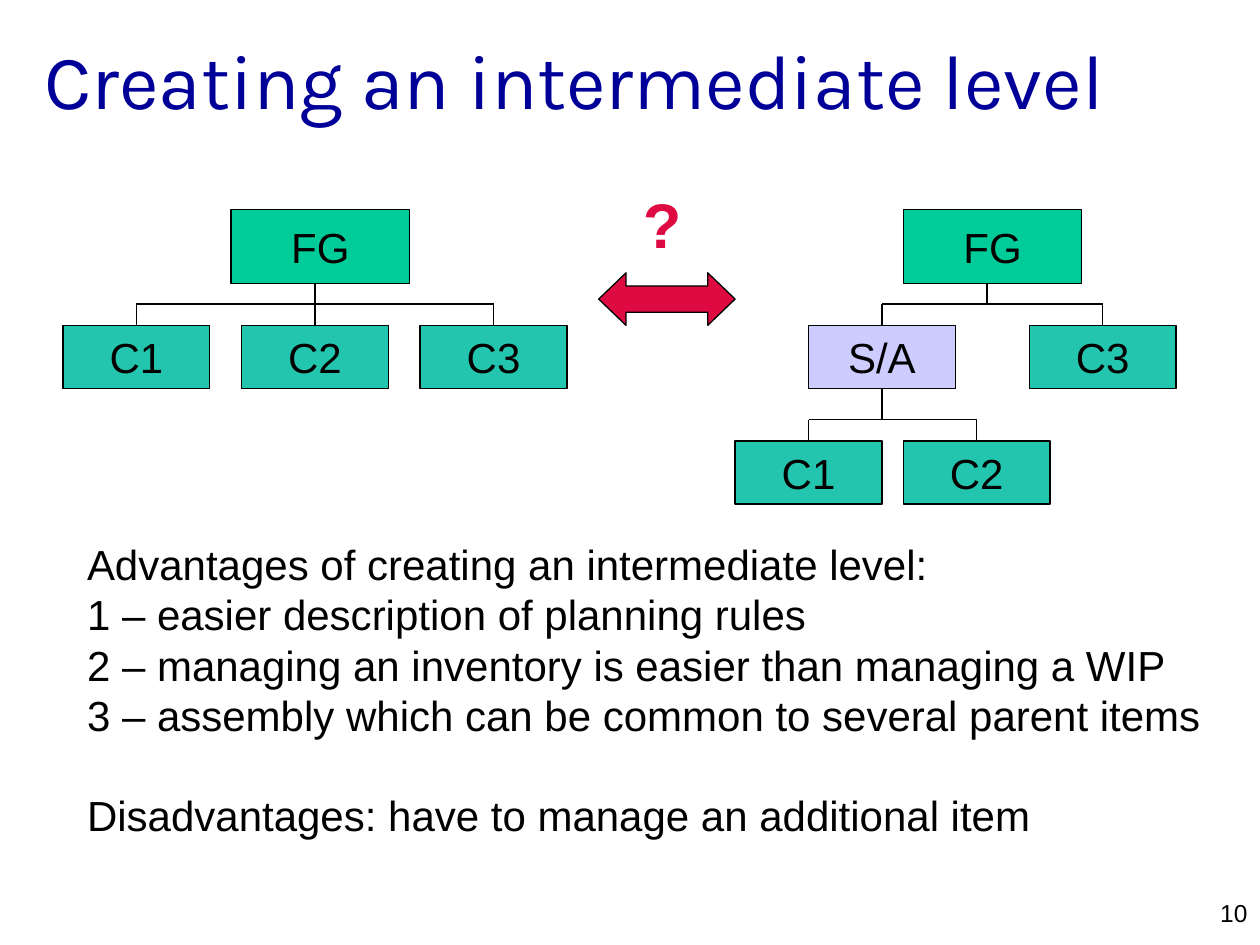
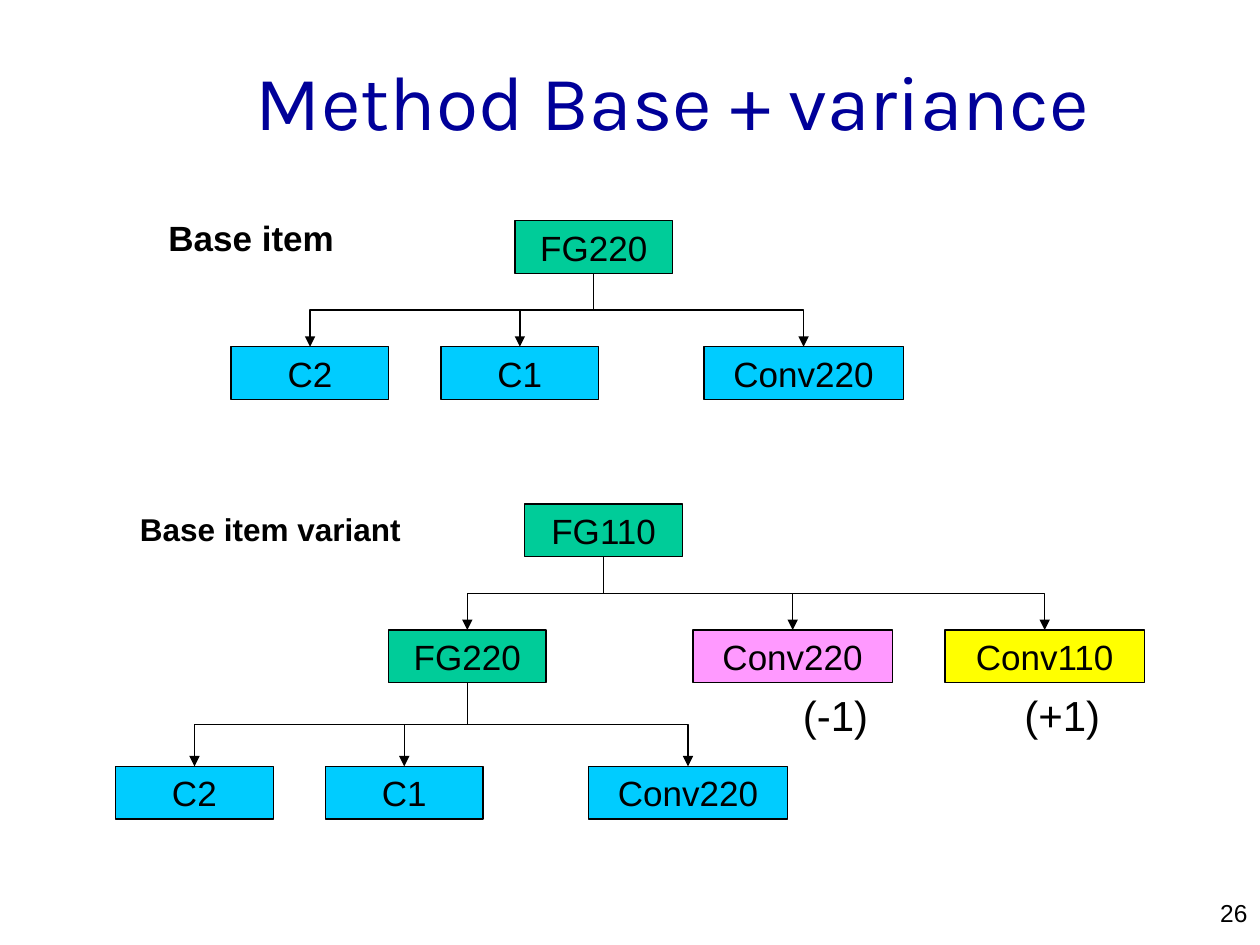
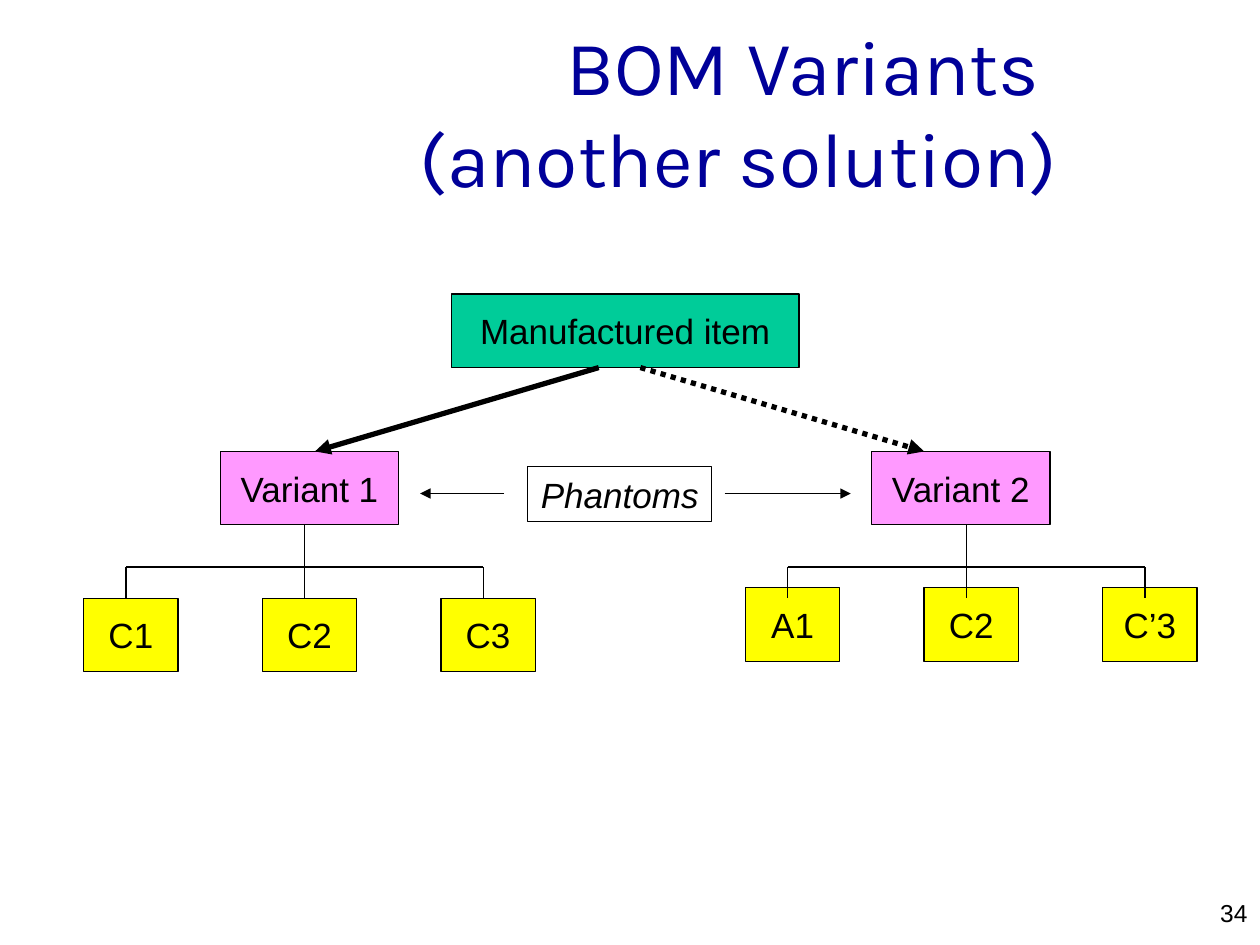
"""Build three slides on bill-of-material structures."""
import dataclasses

import lxml.etree
import pptx
import pptx.dml.color
import pptx.enum.dml
import pptx.enum.shapes
import pptx.enum.text
import pptx.oxml.ns
import pptx.util

Cm = pptx.util.Cm
ALIGN = pptx.enum.text.PP_ALIGN
SHAPE = pptx.enum.shapes.MSO_SHAPE
CONNECTOR = pptx.enum.shapes.MSO_CONNECTOR
BOTTOM, TOP = 2, 0


@dataclasses.dataclass(frozen=True)
class Theme:
    """Colours, fonts and type sizes shared by all slides."""

    ink: str = "000000"
    title: str = "000099"
    product: str = "00CC99"
    component: str = "23C5AE"
    assembly: str = "CCCCFF"
    accent: str = "DE0A42"
    base_component: str = "00CCFF"
    phantom: str = "FF99FF"
    highlight: str = "FFFF00"
    title_font: str = "Karla"
    text_font: str = "Arial"
    title_size: int = 44
    question_size: int = 36
    large: int = 24
    medium: int = 20
    small: int = 18
    number_size: int = 14
    thin: float = 0.75
    thick: float = 3


THEME = Theme()


def rgb(value):
    """Return the colour object for a hex value."""
    return pptx.dml.color.RGBColor.from_string(value)


def place(box, left, top, width, height):
    """Move and size a box, in centimetres."""
    box.left, box.top, box.width, box.height = map(Cm, (left, top, width, height))


def write(box, text, size, align=ALIGN.CENTER, color=THEME.ink, font=THEME.text_font,
          bold=False, italic=False, wrap=False, anchor=pptx.enum.text.MSO_ANCHOR.MIDDLE):
    """Fill a box with formatted text."""
    frame = box.text_frame
    frame.text = text
    frame.word_wrap = wrap
    frame.auto_size = pptx.enum.text.MSO_AUTO_SIZE.NONE
    frame.vertical_anchor = anchor
    for para in frame.paragraphs:
        para.alignment = align
        for span in para.runs:
            span.font.name = font
            span.font.size = pptx.util.Pt(size)
            span.font.bold = bold
            span.font.italic = italic
            span.font.color.rgb = rgb(color)


def add_label(page, left, top, width, height, text, size, **style):
    """Add a plain text box."""
    box = page.shapes.add_textbox(*map(Cm, (left, top, width, height)))
    write(box, text, size, **style)


def add_figure(page, kind, left, top, width, height, fill):
    """Add an outlined preset shape."""
    box = page.shapes.add_shape(kind, *map(Cm, (left, top, width, height)))
    box.shadow.inherit = False
    if fill:
        box.fill.solid()
        box.fill.fore_color.rgb = rgb(fill)
    else:
        box.fill.background()
    box.line.color.rgb = rgb(THEME.ink)
    box.line.width = pptx.util.Pt(THEME.thin)
    return box


def add_node(page, left, top, width, height, text, fill, size=THEME.medium, italic=False):
    """Add a labelled rectangle."""
    box = add_figure(page, SHAPE.RECTANGLE, left, top, width, height, fill)
    write(box, text, size, italic=italic)
    return box


def style_line(connector, width=THEME.thin, arrow=False, dash=None):
    """Format a connector and remove its shadow."""
    connector.line.color.rgb = rgb(THEME.ink)
    connector.line.width = pptx.util.Pt(width)
    if dash:
        connector.line.dash_style = dash
    properties = connector._element.spPr
    if arrow:
        outline = properties.find(pptx.oxml.ns.qn("a:ln"))
        lxml.etree.SubElement(outline, pptx.oxml.ns.qn("a:tailEnd"), type="triangle")
    lxml.etree.SubElement(properties, pptx.oxml.ns.qn("a:effectLst"))


def middle(box):
    """Return the horizontal centre of a box."""
    return box.left + box.width // 2


def meets(box, x, y, edge):
    """Tell whether a point is the middle of a horizontal side."""
    return box is not None and max(abs(middle(box) - x), abs(edge - y)) < Cm(0.03)


def add_line(page, x1, y1, x2, y2, above=None, below=None, **style):
    """Draw a straight line, joined to the boxes whose side middles it meets."""
    connector = page.shapes.add_connector(CONNECTOR.STRAIGHT, x1, y1, x2, y2)
    if above is not None and meets(above, x1, y1, above.top + above.height):
        connector.begin_connect(above, BOTTOM)
    if below is not None and meets(below, x2, y2, below.top):
        connector.end_connect(below, TOP)
    style_line(connector, **style)


def add_bus(page, parent, children, stem, level, end=None, shift=0):
    """Link a parent to its children by a stem, a bar and drops."""
    ends = [middle(child) + shift for child in children]
    bottom = parent.top + parent.height
    add_line(page, ends[0], level, ends[-1], level)
    add_line(page, stem, bottom, stem, level, above=parent)
    for child, x in zip(children, ends):
        add_line(page, x, level, x, end or child.top, below=child)


def add_elbows(page, parent, children):
    """Link a parent to its children by bent arrows that leave downwards."""
    for child in children:
        x1, y1 = middle(parent), parent.top + parent.height
        x2, y2 = middle(child), child.top
        connector = page.shapes.add_connector(CONNECTOR.ELBOW, x1, y1, x2, y2)
        connector.begin_connect(parent, BOTTOM)
        connector.end_connect(child, TOP)
        fall, run = y2 - y1, abs(x2 - x1)
        connector.left, connector.top = (x1 + x2 - fall) // 2, (y1 + y2 - run) // 2
        connector.width, connector.height = fall, run
        frame = connector._element.spPr.find(pptx.oxml.ns.qn("a:xfrm"))
        frame.set("rot", "5400000" if x2 < x1 else "16200000")
        frame.set("flipH", "0" if x2 < x1 else "1")
        frame.set("flipV", "0")
        style_line(connector, arrow=True)


def add_page(deck, layout, title, title_box, number, align=ALIGN.RIGHT):
    """Add a slide with its title and page number."""
    page = deck.slides.add_slide(deck.slide_layouts.get_by_name(layout))
    place(page.shapes.title, *title_box)
    write(page.shapes.title, title, THEME.title_size, align=align, color=THEME.title,
          font=THEME.title_font, wrap=True)
    add_label(page, 20.12, 17.98, 5.28, 0.64, number, THEME.number_size,
              align=ALIGN.RIGHT, wrap=True, anchor=pptx.enum.text.MSO_ANCHOR.TOP)
    return page


def add_goods(page, left, top, text, fill=THEME.component):
    """Add a node of the intermediate-level trees."""
    width, height = (3.6, 1.48) if fill == THEME.product else (2.96, 1.27)
    return add_node(page, left, top, width, height, text, fill, THEME.large)


def add_flat_tree(page, left, top):
    """Draw the tree without an intermediate level."""
    parent = add_goods(page, left + 3.39, top, "FG", THEME.product)
    children = [add_goods(page, left + 3.6 * index, top + 2.33, text)
                for index, text in enumerate(("C1", "C2", "C3"))]
    add_bus(page, parent, children, middle(children[1]), Cm(top + 1.9))


def add_deep_tree(page, left, top):
    """Draw the tree with a sub-assembly level."""
    parent = add_goods(page, left + 3.39, top, "FG", THEME.product)
    assembly = add_goods(page, left + 1.48, top + 2.33, "S/A", THEME.assembly)
    third = add_goods(page, left + 5.93, top + 2.33, "C3")
    children = [add_goods(page, left + offset, top + 4.66, text)
                for offset, text in ((0, "C1"), (3.39, "C2"))]
    add_bus(page, parent, [assembly, third], Cm(left + 5.08), Cm(top + 1.9))
    add_bus(page, assembly, children, middle(assembly), Cm(top + 4.23))


def add_arguments(page, left, top, width, height):
    """Fill the body with advantages and disadvantages."""
    body = page.placeholders[1]
    place(body, left, top, width, height)
    write(body, "\n".join((
        "Advantages of creating an intermediate level:",
        "1 – easier description of planning rules",
        "2 – managing an inventory is easier than managing a WIP",
        "3 – assembly which can be common to several parent items",
        "Disadvantages: have to manage an additional item",
    )), THEME.large, align=ALIGN.LEFT, wrap=True)
    paragraphs = body.text_frame.paragraphs
    for para in paragraphs:
        para.space_before = pptx.util.Pt(0)
        properties = para._p.get_or_add_pPr()
        properties.set("marL", "0")
        properties.set("indent", "0")
        lxml.etree.SubElement(properties, pptx.oxml.ns.qn("a:buNone"))
    paragraphs[-1].space_before = pptx.util.Pt(28)


def build_intermediate_level(deck):
    """Compare a flat tree with one that has an intermediate level."""
    page = add_page(deck, "Title and Content", "Creating an intermediate level",
                    (0.64, 0, 24.77, 3.18), "10", align=ALIGN.LEFT)
    add_flat_tree(page, 1.27, 4.23)
    add_deep_tree(page, 14.82, 4.23)
    add_arguments(page, 1.5, 10.69, 23.24, 6.4)
    arrow = add_figure(page, SHAPE.LEFT_RIGHT_ARROW, 12.07, 5.5, 2.75, 1.06, THEME.accent)
    arrow.adjustments[0], arrow.adjustments[1] = 0.5, 0.52
    add_label(page, 12.7, 3.61, 1.3, 1.78, "?", THEME.question_size,
              color=THEME.accent, bold=True)


def add_item(page, left, top, text, fill):
    """Add an item node, wider for converters."""
    width = 4.02 if text.startswith("Conv") else 3.18
    return add_node(page, left, top, width, 1.06, text, fill)


def add_base_components(page, left, top):
    """Add the row of components that make up the base item."""
    return [add_item(page, left + offset, top, text, THEME.base_component)
            for offset, text in ((0, "C2"), (4.23, "C1"), (9.53, "Conv220"))]


def add_base_tree(page, left, top):
    """Draw the base item and its components."""
    base = add_item(page, left + 5.72, top, "FG220", THEME.product)
    add_elbows(page, base, add_base_components(page, left, top + 2.54))


def add_variant_tree(page, left, top):
    """Draw the variant built on the base item."""
    variant = add_item(page, left + 8.25, top, "FG110", THEME.product)
    children = [add_item(page, left + offset, top + 2.54, text, fill)
                for offset, text, fill in ((5.5, "FG220", THEME.product),
                                           (11.64, "Conv220", THEME.phantom),
                                           (16.72, "Conv110", THEME.highlight))]
    add_elbows(page, variant, children)
    add_elbows(page, children[0], add_base_components(page, left, top + 5.29))
    add_label(page, left + 13.6, top + 3.61, 1.83, 1.27, "(-1)", THEME.large)
    add_label(page, left + 18.07, top + 3.61, 2.03, 1.27, "(+1)", THEME.large)


def build_base_and_variance(deck):
    """Show a base item and a variant of it."""
    page = add_page(deck, "Title Only", "Method Base + variance",
                    (0.64, 0.42, 21.59, 3.18), "26")
    add_label(page, 3.12, 4.22, 3.89, 1.12, "Base item", THEME.medium, bold=True)
    add_base_tree(page, 4.66, 4.45)
    add_label(page, 2.54, 10.16, 5.82, 1.02, "Base item variant", THEME.small, bold=True)
    add_variant_tree(page, 2.33, 10.16)


def add_phantom_tree(page, left, top, name, name_offset, components, drop):
    """Draw a phantom variant above its three components."""
    variant = add_node(page, left + name_offset, top, 3.6, 1.48, name, THEME.phantom)
    children = [add_node(page, left + 3.6 * index, top + drop, 1.9, 1.48,
                         text, THEME.highlight)
                for index, text in enumerate(components)]
    shift = Cm(-0.1)
    add_bus(page, variant, children, middle(children[1]) + shift, Cm(top + 2.33),
            Cm(top + 2.96), shift)


def build_bom_variants(deck):
    """Show an item that chooses between two phantom variants."""
    page = add_page(deck, "Title Only", "BOM Variants \v(another solution)",
                    (0, 0.64, 21.59, 3.18), "34")
    add_node(page, 9.1, 5.93, 7.01, 1.48, "Manufactured item", THEME.product)
    add_phantom_tree(page, 1.69, 9.1, "Variant 1", 2.75, ("C1", "C2", "C3"), 2.96)
    add_phantom_tree(page, 15.03, 9.1, "Variant 2", 2.54, ("A1", "C2", "C’3"), 2.75)
    add_node(page, 10.64, 9.4, 3.71, 1.12, "Phantoms", None, italic=True)
    dotted = pptx.enum.dml.MSO_LINE.ROUND_DOT
    for ends, width, dash in (((12.07, 7.41, 6.35, 9.1), THEME.thick, None),
                              ((12.91, 7.41, 18.63, 9.1), THEME.thick, dotted),
                              ((10.16, 9.95, 8.47, 9.95), THEME.thin, None),
                              ((14.61, 9.95, 17.15, 9.95), THEME.thin, None)):
        add_line(page, *map(Cm, ends), width=width, arrow=True, dash=dash)


def main():
    """Build and save the deck."""
    deck = pptx.Presentation()
    deck.slide_width, deck.slide_height = Cm(25.4), Cm(19.05)
    build_intermediate_level(deck)
    build_base_and_variance(deck)
    build_bom_variants(deck)
    deck.save("out.pptx")


if __name__ == "__main__":
    main()
